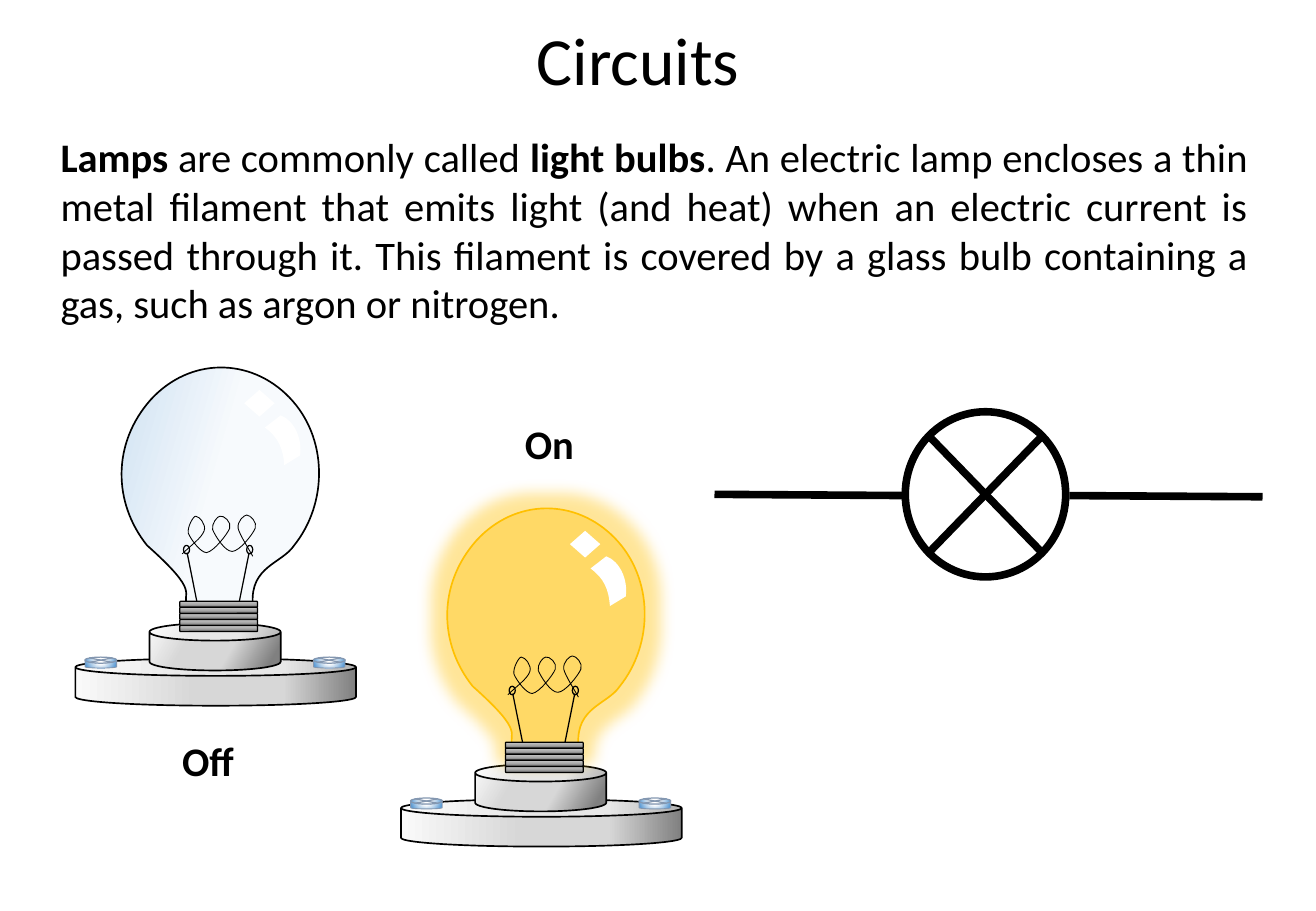
import math

import lxml.etree
import pptx
import pptx.dml.color
import pptx.enum.shapes
import pptx.enum.text
import pptx.oxml
import pptx.oxml.ns
import pptx.util

EMU_PER_PX = 9144
FONT = "Calibri"
SHAPE = pptx.enum.shapes.MSO_SHAPE

COLORS = {
    "ink": "000000",
    "white": "FFFFFF",
    "screw_line": "8497B0",
    "lit_glass": "FFD966",
    "lit_edge": "FFC000",
}

BASE = {"stops": [(0, "FAFAFA"), (43, "D7D7D7"), (74, "D7D7D7"), (100, "808080")], "angle": 0}
HOLDER = {"stops": [(0, "FAFAFA"), (31, "D7D7D7"), (61, "D7D7D7"), (91, "808080")], "angle": 30}
SCREW = {"stops": [(0, "FFFFFF"), (35, "FFFFFF"), (100, "5B9BD5")], "focus": (50, -80, 50, 180)}
THREAD = {"stops": [(0, "6F6F6F"), (48, "A8A8A8"), (100, "C9C9C9")], "angle": 270}
CLEAR_GLASS = {"stops": [(51, "F7FAFD"), (85, "CEE1F2"), (99, "B5D2EC"), (100, "B5D2EC")], "angle": 60}

GLASS_OUTLINE = [
    (238, 327), (270, 360, 270, 414, 242, 449), (232, 464, 206, 466, 208, 497),
    (192, 505, 166, 501, 154, 499), (149, 487, 166, 489, 121, 449),
    (93, 414, 92, 365, 124, 329), (156, 294, 206, 294, 238, 327),
]
FILAMENT = [
    (150, 456), (157, 449, 166, 443, 168, 437), (170, 432, 164, 425, 161, 425),
    (159, 425, 154, 434, 155, 439), (157, 444, 165, 455, 170, 455),
    (176, 454, 187, 440, 189, 435), (191, 430, 184, 424, 181, 425),
    (179, 425, 174, 431, 175, 436), (177, 441, 185, 454, 191, 454),
    (197, 454, 208, 440, 210, 435), (212, 430, 206, 424, 203, 424),
    (201, 424, 195, 429, 196, 435), (197, 440, 206, 454, 208, 458),
]
GLINT = [(218, 352), (231, 342), (242, 346, 249, 361, 247, 375), (234, 383), (233, 369, 229, 360, 218, 352)]


def px(length):
    return round(length * EMU_PER_PX)


def rgb(name):
    return pptx.dml.color.RGBColor.from_string(COLORS[name])


def add_xml(parent, tag, **attributes):
    return lxml.etree.SubElement(parent, pptx.oxml.ns.qn(tag), {k: str(v) for k, v in attributes.items()})


def apply_gradient(shape, gradient):
    shape.fill.gradient()
    grad_fill = shape.element.spPr.find(pptx.oxml.ns.qn("a:gradFill"))
    grad_fill.clear()
    grad_fill.set("rotWithShape", "1")
    stop_list = add_xml(grad_fill, "a:gsLst")
    for position, color in gradient["stops"]:
        add_xml(add_xml(stop_list, "a:gs", pos=position * 1000), "a:srgbClr", val=color)
    if "focus" in gradient:
        focus = {side: share * 1000 for side, share in zip("ltrb", gradient["focus"])}
        add_xml(add_xml(grad_fill, "a:path", path="circle"), "a:fillToRect", **focus)
    else:
        add_xml(grad_fill, "a:lin", ang=gradient["angle"] * 60000, scaled=0)


def style_shape(shape, fill, line, width):
    shape.shadow.inherit = False
    if fill is None:
        shape.fill.background()
    elif isinstance(fill, dict):
        apply_gradient(shape, fill)
    else:
        shape.fill.solid()
        shape.fill.fore_color.rgb = rgb(fill)
    if line is None:
        shape.line.fill.background()
    else:
        shape.line.color.rgb = rgb(line)
        shape.line.width = pptx.util.Pt(width)
    return shape


def add_preset(shapes, kind, box, fill=None, line="ink", width=0.75, adjustment=None):
    shape = shapes.add_shape(kind, *map(px, box))
    if adjustment is not None:
        shape.adjustments[0] = adjustment
    return style_shape(shape, fill, line, width)


def turn_back(point, box, rotation):
    left, top, width, height = box
    x, y = point[0] - left - width / 2, point[1] - top - height / 2
    cos, sin = math.cos(math.radians(rotation)), math.sin(math.radians(rotation))
    return px(x * cos + y * sin + width / 2), px(y * cos - x * sin + height / 2)


def write_curves(outline_xml, outline, box, rotation, close):
    for child in list(outline_xml):
        outline_xml.remove(child)
    for index, segment in enumerate(outline):
        tag = "a:cubicBezTo" if len(segment) == 6 else "a:lnTo" if index else "a:moveTo"
        step = add_xml(outline_xml, tag)
        for point in zip(segment[::2], segment[1::2]):
            x, y = turn_back(point, box, rotation)
            add_xml(step, "a:pt", x=x, y=y)
    if close:
        add_xml(outline_xml, "a:close")


def add_outline(shapes, outline, box, offset, rotation, fill=None, line=None, width=1, close=True):
    left, top, right, bottom = map(px, (
        box[0] + offset[0], box[1] + offset[1],
        box[0] + offset[0] + box[2], box[1] + offset[1] + box[3],
    ))
    builder = shapes.build_freeform(left, top, scale=1.0)
    builder.add_line_segments([(right, top), (right, bottom), (left, bottom)], close=close)
    shape = builder.convert_to_shape()
    outline_xml = next(shape.element.spPr.iter(pptx.oxml.ns.qn("a:path")))
    write_curves(outline_xml, outline, box, rotation, close)
    shape.rotation = rotation
    return style_shape(shape, fill, line, width)


def add_line(shapes, start, end, width):
    line = shapes.add_connector(pptx.enum.shapes.MSO_CONNECTOR.STRAIGHT, *map(px, start + end))
    line.line.color.rgb = rgb("ink")
    line.line.width = pptx.util.Pt(width)
    add_xml(line.element.spPr, "a:effectLst")


def add_glow(shape, color, radius):
    effects = shape.element.spPr.find(pptx.oxml.ns.qn("a:effectLst"))
    glow = add_xml(effects, "a:glow", rad=pptx.util.Pt(radius))
    add_xml(add_xml(glow, "a:srgbClr", val=COLORS[color]), "a:alpha", val=40000)


def add_text(slide, box, runs, size, wrap=False, align=pptx.enum.text.PP_ALIGN.LEFT):
    frame = slide.shapes.add_textbox(*map(px, box)).text_frame
    frame.word_wrap = wrap
    frame.auto_size = pptx.enum.text.MSO_AUTO_SIZE.SHAPE_TO_FIT_TEXT
    paragraph = frame.paragraphs[0]
    paragraph.alignment = align
    paragraph.font.name = FONT
    paragraph.font.size = pptx.util.Pt(size)
    paragraph.font.color.rgb = rgb("ink")
    for text, bold in runs:
        run = paragraph.add_run()
        run.text = text
        run.font.bold = bold


def add_lamp(slide, dx, dy, lit):
    lamp = slide.shapes.add_group_shape().shapes

    def at(x, y, width, height):
        return x + dx, y + dy, width, height

    add_preset(lamp, SHAPE.CAN, at(62, 542, 231, 39), BASE, width=1, adjustment=0.37)
    add_preset(lamp, SHAPE.CAN, at(123, 513, 108, 39), HOLDER, width=1, adjustment=0.37)
    for x in (70, 258):
        add_preset(lamp, SHAPE.CAN, at(x, 542, 26, 8), SCREW, "screw_line", 0.5, 0.25)
        add_preset(lamp, SHAPE.FLOWCHART_SUMMING_JUNCTION, at(x, 541, 26, 5), SCREW, "screw_line")
    glass_fill, glass_edge = ("lit_glass", "lit_edge") if lit else (CLEAR_GLASS, "ink")
    glass = add_outline(lamp, GLASS_OUTLINE, (92, 308, 179, 179), (dx, dy), 136, glass_fill, glass_edge)
    if lit:
        add_glow(glass, "lit_edge", 18)
    add_outline(lamp, FILAMENT, (150, 423, 60, 35), (dx, dy), 2.8, line="ink", width=0.5, close=False)
    for band in range(5):
        add_preset(lamp, SHAPE.ROUNDED_RECTANGLE, at(148, 495 + 5 * band, 64, 5), THREAD)
    for loop_x, wire_top, wire_foot in ((203, 205, 197), (151, 154, 162)):
        add_line(lamp, (wire_top + dx, 455 + dy), (wire_foot + dx, 495 + dy), 0.75)
        add_preset(lamp, SHAPE.OVAL, at(loop_x, 449, 5, 7))
    add_preset(lamp, SHAPE.DIAMOND, at(201, 321, 25, 22), "white", None)
    add_outline(lamp, GLINT, (217, 342, 31, 41), (dx, dy), 6.9, "white")


def add_lamp_symbol(slide):
    symbol = slide.shapes.add_group_shape().shapes
    add_preset(symbol, SHAPE.FLOWCHART_SUMMING_JUNCTION, (745, 339, 132, 136), "white", width=4.5)
    add_line(symbol, (588, 407), (748, 408), 4.5)
    add_line(symbol, (880, 408), (1039, 409), 4.5)


def main():
    presentation = pptx.Presentation()
    presentation.slide_width = px(1083)
    presentation.slide_height = px(750)
    slide = presentation.slides.add_slide(presentation.slide_layouts[6])
    add_lamp(slide, 0, 0, lit=False)
    add_lamp(slide, 268, 116, lit=True)
    add_text(slide, (40, 104, 997, 172), [
        ("Lamps", True),
        (" are commonly called ", False),
        ("light bulbs", True),
        (". An electric lamp encloses a thin metal filament that emits light (and heat) when an "
         "electric current is passed through it. This filament is covered by a glass bulb "
         "containing a gas, such as argon or nitrogen.", False),
    ], 24, wrap=True, align=pptx.enum.text.PP_ALIGN.JUSTIFY)
    add_text(slide, (432, 10, 188, 77), [("Circuits", False)], 40)
    add_text(slide, (422, 340, 61, 50), [("On", True)], 24)
    add_text(slide, (140, 601, 64, 50), [("Off", True)], 24)
    add_lamp_symbol(slide)
    presentation.save("out.pptx")


if __name__ == "__main__":
    main()
